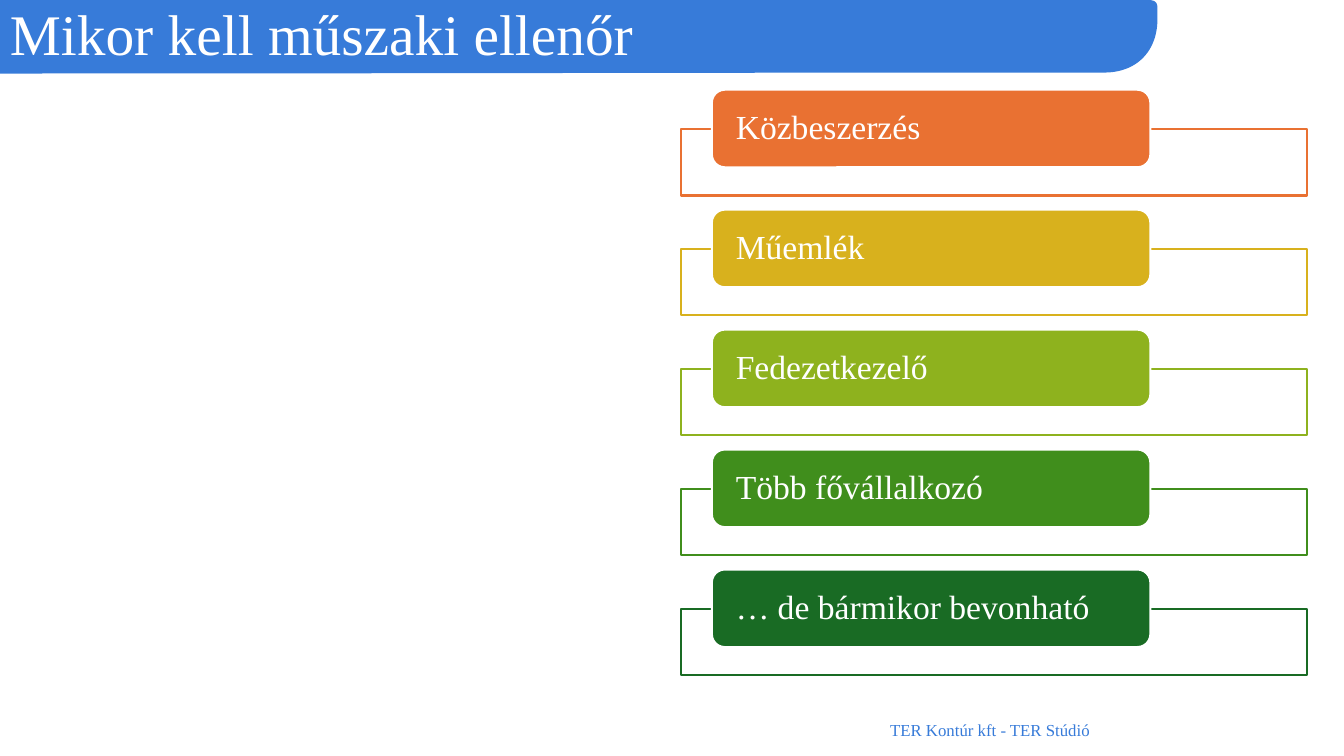
"""Build the slide on when a technical inspector is required."""
from pptx import Presentation
from pptx.dml.color import RGBColor
from pptx.enum.shapes import MSO_SHAPE
from pptx.enum.text import MSO_ANCHOR, PP_ALIGN
from pptx.util import Inches, Pt

BLUE, WHITE = "377BD9", "FFFFFF"


def color(value):
    return RGBColor.from_string(value)


def write(shape, text, size, ink, inset, paragraph_format):
    frame = shape.text_frame
    frame.word_wrap = True
    frame.vertical_anchor = MSO_ANCHOR.MIDDLE
    frame.margin_left = frame.margin_right = Inches(inset)
    frame.margin_top = frame.margin_bottom = 0
    paragraph = frame.paragraphs[0]
    paragraph.text = text
    for name, value in paragraph_format.items():
        setattr(paragraph, name, value)
    for name, value in {"size": Pt(size), "name": "Times New Roman"}.items():
        setattr(paragraph.font, name, value)
    paragraph.font.color.rgb = color(ink)


prs = Presentation()
prs.slide_width, prs.slide_height = Inches(13.33), Inches(7.5)
slide = prs.slides.add_slide(prs.slide_layouts[6])
shapes = slide.shapes

corners = [
    [(11.48, 0.19), (11.48, 0.5), (11.28, 0.73), (10.93, 0.72)],
    [(10.93, 0.72), (7.34, 0.72), (3.59, 0.73), (0, 0.73)],
    [(0, 0), (0, 0), (11.38, 0), (11.38, 0)],
    [(11.38, 0), (11.45, 0), (11.48, 0.02), (11.48, 0.08)],
]
steps = 24
outline = []
for curve in corners:
    for step in range(steps + 1):
        t = step / steps
        weights = [(1 - t) ** 3, 3 * t * (1 - t) ** 2, 3 * t**2 * (1 - t), t**3]
        outline.append(tuple(
            Inches(sum(w * point[axis] for w, point in zip(weights, curve)))
            for axis in (0, 1)))
builder = shapes.build_freeform(*outline[0])
builder.add_line_segments(outline[1:], close=True)
banner = builder.convert_to_shape()
banner.shadow.inherit = False
banner.fill.solid()
banner.fill.fore_color.rgb = color(BLUE)
banner.line.fill.background()

title = shapes.add_textbox(0, 0, Inches(11.1), Inches(0.73))
write(title, "Mikor kell műszaki ellenőr", 41, WHITE, 0.1,
      {"alignment": PP_ALIGN.LEFT, "line_spacing": 0.9})

footer = shapes.add_textbox(Inches(7.96), Inches(7.04), Inches(3.72), Inches(0.4))
write(footer, "TER Kontúr kft - TER Stúdió", 12, BLUE, 0.1,
      {"alignment": PP_ALIGN.CENTER, "space_after": Pt(6)})

cases = [
    ("Közbeszerzés", "E97132"),
    ("Műemlék", "D8B11D"),
    ("Fedezetkezelő", "8EB21E"),
    ("Több fővállalkozó", "408E1C"),
    ("… de bármikor bevonható", "196B24"),
]
for row, (case, accent) in enumerate(cases):
    top = 0.89 + 1.19 * row
    frame = shapes.add_shape(MSO_SHAPE.RECTANGLE, Inches(6.75), Inches(top + 0.39),
                             Inches(6.21), Inches(0.66))
    label = shapes.add_shape(MSO_SHAPE.ROUNDED_RECTANGLE, Inches(7.06), Inches(top),
                             Inches(4.35), Inches(0.77))
    for box, fill, line in ((frame, WHITE, accent), (label, accent, WHITE)):
        box.shadow.inherit = False
        box.fill.solid()
        box.fill.fore_color.rgb = color(fill)
        box.line.color.rgb = color(line)
        box.line.width = Pt(1.5)
    write(label, case, 24, WHITE, 0.2,
          {"alignment": PP_ALIGN.LEFT, "line_spacing": 0.9})

prs.save("out.pptx")
